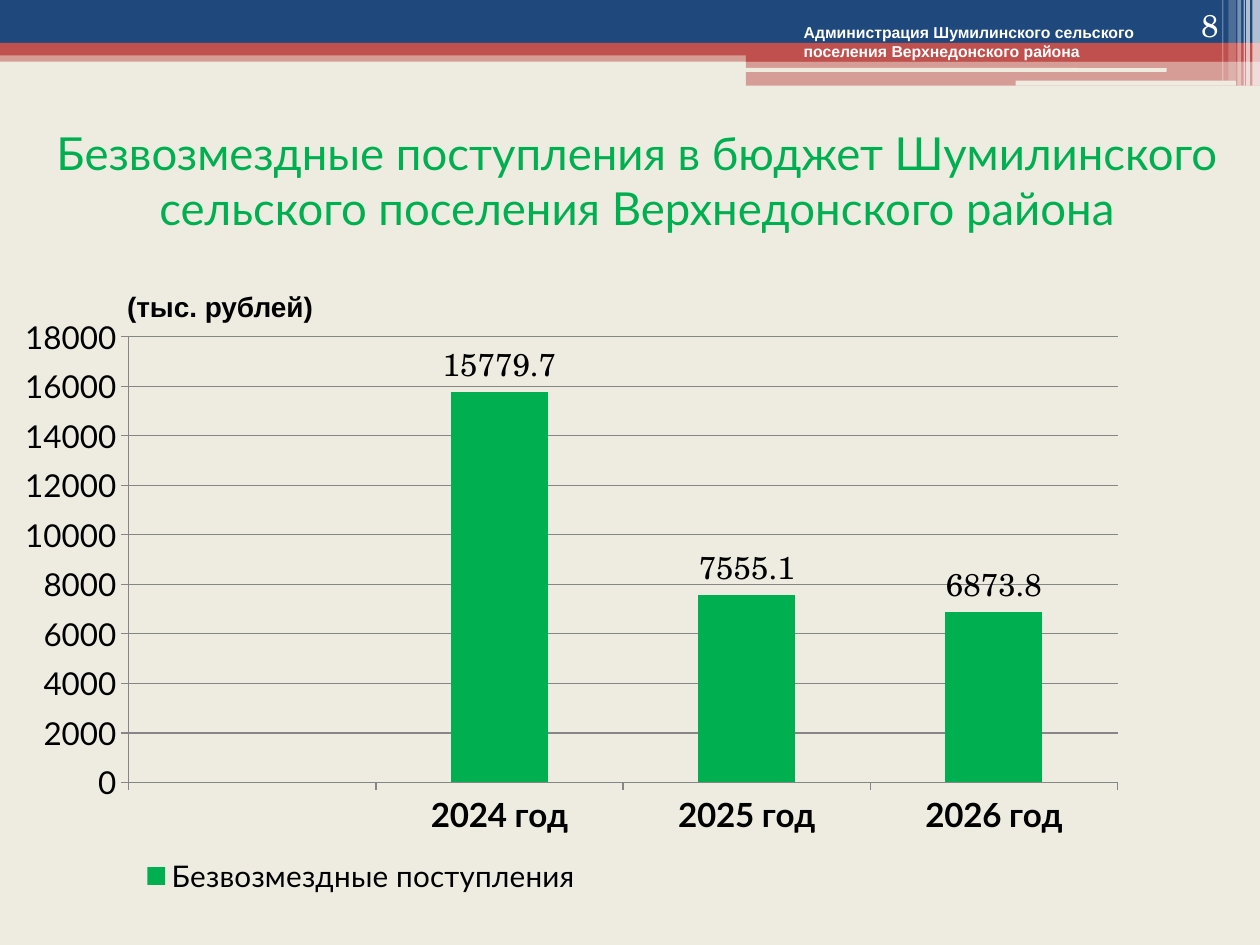
from lxml import etree
from pptx import Presentation
from pptx.chart.data import CategoryChartData
from pptx.dml.color import RGBColor
from pptx.enum.chart import XL_CHART_TYPE, XL_LABEL_POSITION, XL_LEGEND_POSITION, XL_TICK_MARK
from pptx.enum.shapes import MSO_SHAPE
from pptx.enum.text import MSO_ANCHOR, PP_ALIGN
from pptx.oxml.ns import qn
from pptx.util import Inches, Pt

RECTANGLE = MSO_SHAPE.RECTANGLE
ROUNDED = MSO_SHAPE.ROUNDED_RECTANGLE
COLUMNS = XL_CHART_TYPE.COLUMN_CLUSTERED
OUTSIDE_END = XL_LABEL_POSITION.OUTSIDE_END
LEGEND_BOTTOM = XL_LEGEND_POSITION.BOTTOM
TICK_OUTSIDE = XL_TICK_MARK.OUTSIDE
TICK_NONE = XL_TICK_MARK.NONE
TOP, MIDDLE, BOTTOM = MSO_ANCHOR.TOP, MSO_ANCHOR.MIDDLE, MSO_ANCHOR.BOTTOM
LEFT, CENTER, RIGHT = PP_ALIGN.LEFT, PP_ALIGN.CENTER, PP_ALIGN.RIGHT

NAVY, RED, CREAM, WHITE = "1F497D", "C0504D", "EEECE1", "FFFFFF"
GREEN, BLACK, GRAY = "00B050", "000000", "868686"
SANS, SERIF, ARIAL = "Lato", "TeX Gyre Schola", "Arial"

BANDS = [
    (0, 0.4, 10, 0.09, RED, 50, RECTANGLE),
    (0, 0, 10, 0.34, NAVY, 100, RECTANGLE),
    (0, 0.34, 10, 0.1, RED, 100, RECTANGLE),
    (5.92, 0.39, 4.08, 0.1, RED, 100, RECTANGLE),
    (5.92, 0.48, 4.08, 0.2, RED, 50, RECTANGLE),
    (5.91, 0.54, 3.35, 0.03, CREAM, 100, ROUNDED),
    (8.06, 0.64, 1.75, 0.04, CREAM, 100, ROUNDED),
]
STRIPES = [
    (9.94, 0.06, 0.68, 65),
    (9.89, 0.03, 0.68, 65),
    (9.87, 0.01, 0.68, 60),
    (9.82, 0.03, 0.68, 40),
    (9.75, 0.06, 0.64, 20),
    (9.7, 0.01, 0.64, 30),
]


def color(value):
    return RGBColor.from_string(value)


def set_font(font, name, size, fill=BLACK, bold=False):
    font.name = name
    font.size = Pt(size)
    font.bold = bold
    font.color.rgb = color(fill)


def add_band(slide, left, top, width, height, fill, opacity, preset):
    shape = slide.shapes.add_shape(
        preset, Inches(left), Inches(top), Inches(width), Inches(height))
    shape.shadow.inherit = False
    shape.line.fill.background()
    shape.fill.solid()
    shape.fill.fore_color.rgb = color(fill)
    if opacity < 100:
        fill_color = shape._element.spPr.find(qn("a:solidFill"))[0]
        alpha = etree.SubElement(fill_color, qn("a:alpha"))
        alpha.set("val", str(opacity * 1000))


def add_text(slide, text, box, name, size, fill, bold=False, align=LEFT, anchor=TOP):
    shape = slide.shapes.add_textbox(*[Inches(length) for length in box])
    frame = shape.text_frame
    frame.word_wrap = True
    frame.vertical_anchor = anchor
    paragraph = frame.paragraphs[0]
    paragraph.text = text
    paragraph.alignment = align
    set_font(paragraph.font, name, size, fill, bold)


def build_layout(**settings):
    layout = etree.Element(qn("c:layout"))
    manual = etree.SubElement(layout, qn("c:manualLayout"))
    for tag, value in settings.items():
        etree.SubElement(manual, qn("c:" + tag)).set("val", str(value))
    return layout


def place_in_chart(element, index, layout):
    for previous in element.findall(qn("c:layout")):
        element.remove(previous)
    element.insert(index, layout)


def style_axis(axis, size, bold=False):
    axis.major_tick_mark = TICK_OUTSIDE
    axis.minor_tick_mark = TICK_NONE
    axis.format.line.color.rgb = color(GRAY)
    set_font(axis.tick_labels.font, SANS, size, BLACK, bold)


def add_income_chart(slide):
    data = CategoryChartData()
    data.categories = ["", "2024 год", "2025 год", "2026 год"]
    data.add_series("Безвозмездные поступления", [None, 15779.7, 7555.1, 6873.8])
    chart = slide.shapes.add_chart(
        COLUMNS, Inches(0.2), Inches(2.46), Inches(8.82), Inches(4.73), data).chart
    set_font(chart.font, SERIF, 18)
    chart.has_title = False

    style_axis(chart.category_axis, 19, True)
    value_axis = chart.value_axis
    style_axis(value_axis, 18)
    value_axis.minimum_scale = 0
    value_axis.maximum_scale = 18000
    value_axis.major_unit = 2000
    value_axis.has_major_gridlines = True
    value_axis.major_gridlines.format.line.color.rgb = color(GRAY)

    plot = chart.plots[0]
    plot.gap_width = 155
    plot.vary_by_categories = False
    series = plot.series[0]
    series.format.fill.solid()
    series.format.fill.fore_color.rgb = color(GREEN)
    labels = series.data_labels
    labels.show_value = True
    labels.position = OUTSIDE_END
    set_font(labels.font, SERIF, 18)

    chart.has_legend = True
    legend = chart.legend
    legend.position = LEGEND_BOTTOM
    legend.include_in_layout = False
    set_font(legend.font, SANS, 17)
    place_in_chart(legend._element, 1, build_layout(
        xMode="edge", yMode="edge", x=0.1, y=0.91, w=0.4, h=0.08))
    plot_area = chart._chartSpace.chart.plotArea
    place_in_chart(plot_area, 0, build_layout(
        layoutTarget="inner", xMode="edge", yMode="edge",
        x=0.09, y=0.045, w=0.893, h=0.748))


def main():
    presentation = Presentation()
    presentation.slide_width = Inches(10)
    presentation.slide_height = Inches(7.5)
    slide = presentation.slides.add_slide(presentation.slide_layouts[6])
    slide.background.fill.solid()
    slide.background.fill.fore_color.rgb = color(CREAM)

    for band in BANDS:
        add_band(slide, *band)
    for left, width, height, opacity in STRIPES:
        add_band(slide, left, 0, width, height, WHITE, opacity, RECTANGLE)

    add_text(slide, "Безвозмездные поступления в бюджет Шумилинского "
             "сельского поселения Верхнедонского района",
             (0.12, 0.84, 9.88, 1.17), SANS, 26, GREEN, align=CENTER, anchor=MIDDLE)
    add_income_chart(slide)
    add_text(slide, "8", (8.94, 0, 0.83, 0.4), SERIF, 18, WHITE,
             align=RIGHT, anchor=BOTTOM)
    add_text(slide, "(тыс. рублей)", (0.91, 2.25, 1.81, 0.37), ARIAL, 16, BLACK, True)
    add_text(slide, "Администрация Шумилинского сельского "
             "поселения Верхнедонского района",
             (6.28, 0.13, 3.11, 0.4), ARIAL, 9, WHITE, True)
    presentation.save("out.pptx")


if __name__ == "__main__":
    main()
